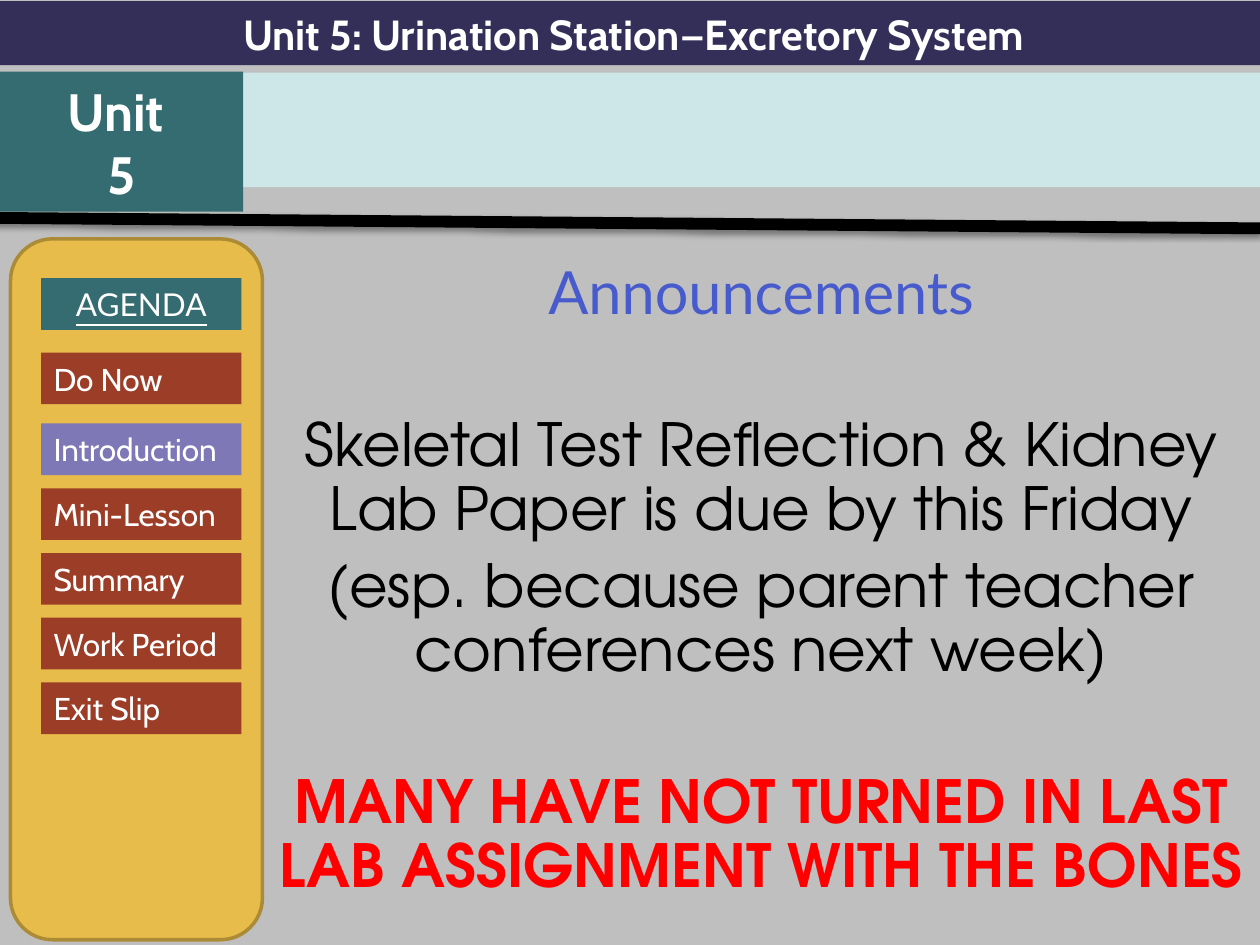
from lxml.etree import SubElement
from pptx import Presentation
from pptx.dml.color import RGBColor
from pptx.enum.shapes import MSO_CONNECTOR, MSO_SHAPE
from pptx.enum.text import MSO_ANCHOR, PP_ALIGN
from pptx.oxml.ns import qn
from pptx.util import Pt

THEME = {
    "background": "BFBFBF", "navy": "342F59", "teal": "346C71", "pale": "CDE6E8",
    "gold": "E8BC4A", "gold_edge": "AC8B37", "brick": "9C3D28", "violet": "7E78B7",
    "blue": "475BCD", "red": "FF0000", "black": "000000", "white": "FFFFFF",
    "label_font": "Cabin", "heading_font": "Lato", "body_font": "TeX Gyre Adventor",
    "title_size": 24, "unit_size": 30, "agenda_size": 18, "body_size": 34,
}

BANNER = "Unit 5: Urination Station—Excretory System"
UNIT_LINES = ["Unit ", "5"]
AGENDA_TITLE = "AGENDA"
FIRST_STEP = "Do Now"
LATER_STEPS = ["Introduction", "Mini-Lesson", "Summary", "Work Period", "Exit Slip"]
CURRENT_STEP = "Introduction"
# text, font, colour, bold, space before
ANNOUNCEMENTS = [
    ("Announcements", "heading_font", "blue", False, 0),
    ("Skeletal Test Reflection & Kidney Lab Paper is due by this Friday",
     "body_font", "black", False, 50),
    ("(esp. because parent teacher conferences next week)",
     "body_font", "black", False, 7),
    ("MANY HAVE NOT TURNED IN LAST LAB ASSIGNMENT WITH THE BONES",
     "body_font", "red", True, 50),
]

BUTTON_LEFT, BUTTON_WIDTH, BUTTON_HEIGHT = 23.5, 114.5, 29.5
AGENDA_TOP, FIRST_STEP_TOP, LATER_STEPS_TOP, STEP_PITCH = 159, 201.5, 242, 37


def color(name):
    return RGBColor.from_string(THEME[name])


def style(paragraph, font, size, color_name, bold=False, align=PP_ALIGN.CENTER):
    paragraph.alignment = align
    paragraph.font.name = THEME[font]
    paragraph.font.size = Pt(THEME[size])
    paragraph.font.bold = bold
    paragraph.font.color.rgb = color(color_name)


def add_panel(slide, box, fill, kind=MSO_SHAPE.RECTANGLE):
    shape = slide.shapes.add_shape(kind, *map(Pt, box))
    shape.shadow.inherit = False
    shape.fill.solid()
    shape.fill.fore_color.rgb = color(fill)
    shape.line.fill.background()
    return shape


def add_label(slide, box, fill, lines, size, font="label_font", bold=False,
              align=PP_ALIGN.CENTER):
    """Add a filled rectangle with white text and return its text frame."""
    frame = add_panel(slide, box, fill).text_frame
    frame.word_wrap = True
    frame.vertical_anchor = MSO_ANCHOR.MIDDLE
    frame.text = "\n".join(lines)
    for paragraph in frame.paragraphs:
        style(paragraph, font, size, "white", bold, align)
    return frame


def add_divider(slide):
    """Add the slanted black rule with its soft shadow below."""
    line = slide.shapes.add_connector(
        MSO_CONNECTOR.STRAIGHT, Pt(-3.5), Pt(124.5), Pt(720), Pt(130.5))
    line.line.color.rgb = color("black")
    line.line.width = Pt(6.75)
    effects = SubElement(line._element.spPr, qn("a:effectLst"))
    shadow = SubElement(effects, qn("a:outerShdw"), blurRad=str(Pt(3.1)),
                        dist=str(Pt(1.6)), dir="5400000", rotWithShape="0")
    tint = SubElement(shadow, qn("a:srgbClr"), val=THEME["black"])
    SubElement(tint, qn("a:alpha"), val="38000")


def add_announcements(slide):
    box = slide.shapes.add_textbox(Pt(150), Pt(147), Pt(570), Pt(393))
    frame = box.text_frame
    frame.word_wrap = True
    frame.text = "\n".join(item[0] for item in ANNOUNCEMENTS)
    for paragraph, item in zip(frame.paragraphs, ANNOUNCEMENTS):
        _, font, color_name, bold, space_before = item
        style(paragraph, font, "body_size", color_name, bold)
        paragraph.line_spacing = 0.9
        paragraph.space_before = Pt(space_before)


def add_agenda(slide):
    panel = add_panel(slide, (6, 136.5, 144, 400.5), "gold", MSO_SHAPE.ROUNDED_RECTANGLE)
    panel.line.color.rgb = color("gold_edge")
    panel.line.width = Pt(2)

    heading = add_label(slide, (BUTTON_LEFT, AGENDA_TOP, BUTTON_WIDTH, BUTTON_HEIGHT),
                        "teal", [AGENDA_TITLE], "agenda_size", "heading_font")
    heading.paragraphs[0].font.underline = True

    steps = [(FIRST_STEP, FIRST_STEP_TOP)]
    steps += [(step, LATER_STEPS_TOP + index * STEP_PITCH)
              for index, step in enumerate(LATER_STEPS)]
    for step, top in steps:
        fill = "violet" if step == CURRENT_STEP else "brick"
        add_label(slide, (BUTTON_LEFT, top, BUTTON_WIDTH, BUTTON_HEIGHT), fill,
                  [step], "agenda_size", align=PP_ALIGN.LEFT)


def main():
    presentation = Presentation()
    presentation.slide_width, presentation.slide_height = Pt(720), Pt(540)
    slide = presentation.slides.add_slide(presentation.slide_layouts[6])
    slide.background.fill.solid()
    slide.background.fill.fore_color.rgb = color("background")

    add_announcements(slide)
    add_label(slide, (0, 0.75, 724, 36.5), "navy", [BANNER], "title_size", bold=True)
    add_label(slide, (0, 41, 139, 80), "teal", UNIT_LINES, "unit_size", bold=True)
    add_panel(slide, (139, 41.5, 583, 65.5), "pale")
    add_divider(slide)
    add_agenda(slide)
    presentation.save("out.pptx")


if __name__ == "__main__":
    main()
